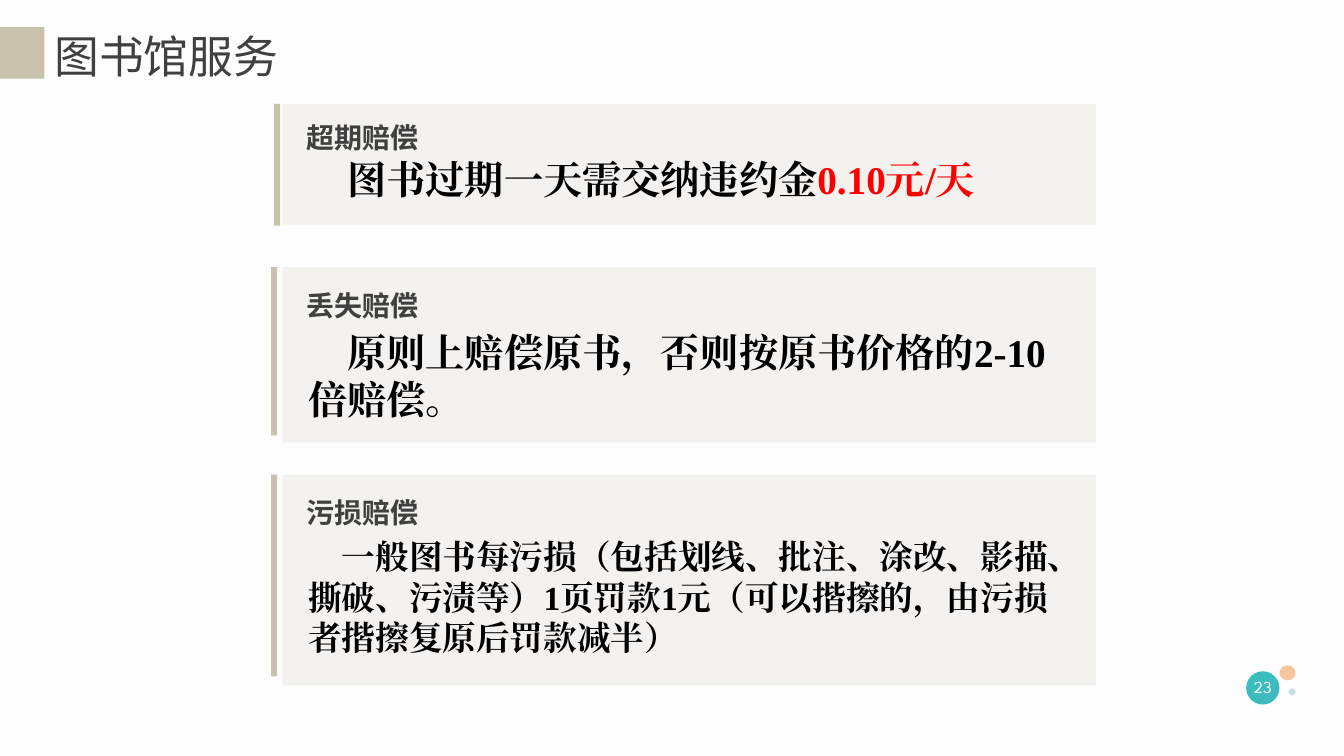
from lxml.etree import SubElement
from pptx import Presentation
from pptx.dml.color import RGBColor
from pptx.enum.shapes import MSO_SHAPE
from pptx.enum.text import MSO_ANCHOR, MSO_AUTO_SIZE, PP_ALIGN
from pptx.oxml.ns import qn
from pptx.util import Inches, Pt

COLORS = {
    "paper": "FDFDFD", "sand": "C8C2AC", "heading": "404040", "body": "000000",
    "alert": "FF0000", "teal": "3DBCC0", "peach": "F7C8A0", "mist": "C8DFDF",
    "white": "FFFFFF",
}
SANS, SERIF, NUMERAL = "Noto Sans CJK SC", "Times New Roman", "League Spartan"


class LibrarySlide:
    """Holds the slide and the style of its elements."""

    def __init__(self, deck):
        self.slide = deck.slides.add_slide(deck.slide_layouts[6])
        background = self.slide.background.fill
        background.solid()
        background.fore_color.rgb = self.color("paper")

    def color(self, name):
        return RGBColor.from_string(COLORS[name])

    def block(self, left, top, width, height, color, kind=MSO_SHAPE.RECTANGLE, opacity=100):
        block = self.slide.shapes.add_shape(
            kind, Inches(left), Inches(top), Inches(width), Inches(height))
        block.shadow.inherit = False
        block.line.fill.background()
        block.fill.solid()
        block.fill.fore_color.rgb = self.color(color)
        if opacity < 100:
            tint = block.fill._xPr.find(qn("a:solidFill"))[0]
            SubElement(tint, qn("a:alpha")).set("val", str(opacity * 1000))

    def text(self, left, top, width, height, runs, size, font,
             bold=False, wrap=False, indent=0, centered=False):
        box = self.slide.shapes.add_textbox(
            Inches(left), Inches(top), Inches(width), Inches(height))
        frame = box.text_frame
        frame.word_wrap = wrap
        frame.auto_size = MSO_AUTO_SIZE.NONE if centered else MSO_AUTO_SIZE.SHAPE_TO_FIT_TEXT
        paragraph = frame.paragraphs[0]
        if centered:
            frame.vertical_anchor = MSO_ANCHOR.MIDDLE
            paragraph.alignment = PP_ALIGN.CENTER
        if indent:
            properties = paragraph._p.get_or_add_pPr()
            properties.set("marL", "0")
            properties.set("indent", str(Pt(indent)))
        for words, color in runs:
            run = paragraph.add_run()
            run.text = words
            run.font.size = Pt(size)
            run.font.bold = bold
            run.font.name = font
            run.font.color.rgb = self.color(color)
            SubElement(run._r.get_or_add_rPr(), qn("a:ea")).set("typeface", font)

    def rule_card(self, top, height, bar, heading, heading_top, body, body_top, body_height, size):
        bar_left, bar_height = bar
        self.block(2.8, top, 8.07, height, "sand", opacity=18)
        self.text(2.94, heading_top, 1.33, 0.44, [(heading, "heading")], 20, SANS, bold=True)
        self.block(bar_left, top, 0.06, bar_height, "sand")
        self.text(2.96, body_top, 7.83, body_height, body, size, SERIF,
                  bold=True, wrap=True, indent=size)

    def page_badge(self, number):
        for left, top, width, height, color in (
                (12.36, 6.66, 0.33, 0.33, "teal"),
                (12.69, 6.6, 0.16, 0.15, "peach"),
                (12.78, 6.83, 0.07, 0.07, "mist")):
            self.block(left, top, width, height, color, MSO_SHAPE.OVAL)
        self.text(12.29, 6.61, 0.47, 0.4, [(number, "white")], 12, NUMERAL,
                  wrap=True, centered=True)


def main():
    deck = Presentation()
    deck.slide_width, deck.slide_height = Inches(13.33), Inches(7.5)
    page = LibrarySlide(deck)
    page.page_badge("23")
    page.block(0, 0.27, 0.44, 0.51, "sand")
    page.text(0.44, 0.24, 2.45, 0.64, [("图书馆服务", "heading")], 32, SANS)

    overdue = [("图书过期一天需交纳违约金", "body"), ("0.10元/天", "alert")]
    lost = [("原则上赔偿原书，否则按原书价格的2-10倍赔偿。", "body")]
    damaged = [("一般图书每污损（包括划线、批注、涂改、影描、撕破、污渍等）1页罚款1元"
                "（可以揩擦的，由污损者揩擦复原后罚款减半）", "body")]
    page.rule_card(1.03, 1.2, (2.72, 1.21), "超期赔偿", 1.15, overdue, 1.49, 0.57, 28)
    page.rule_card(2.65, 1.74, (2.69, 1.67), "丢失赔偿", 2.81, lost, 3.21, 1.04, 28)
    page.rule_card(4.71, 2.09, (2.69, 2), "污损赔偿", 4.87, damaged, 5.27, 1.31, 24)
    deck.save("out.pptx")


if __name__ == "__main__":
    main()
